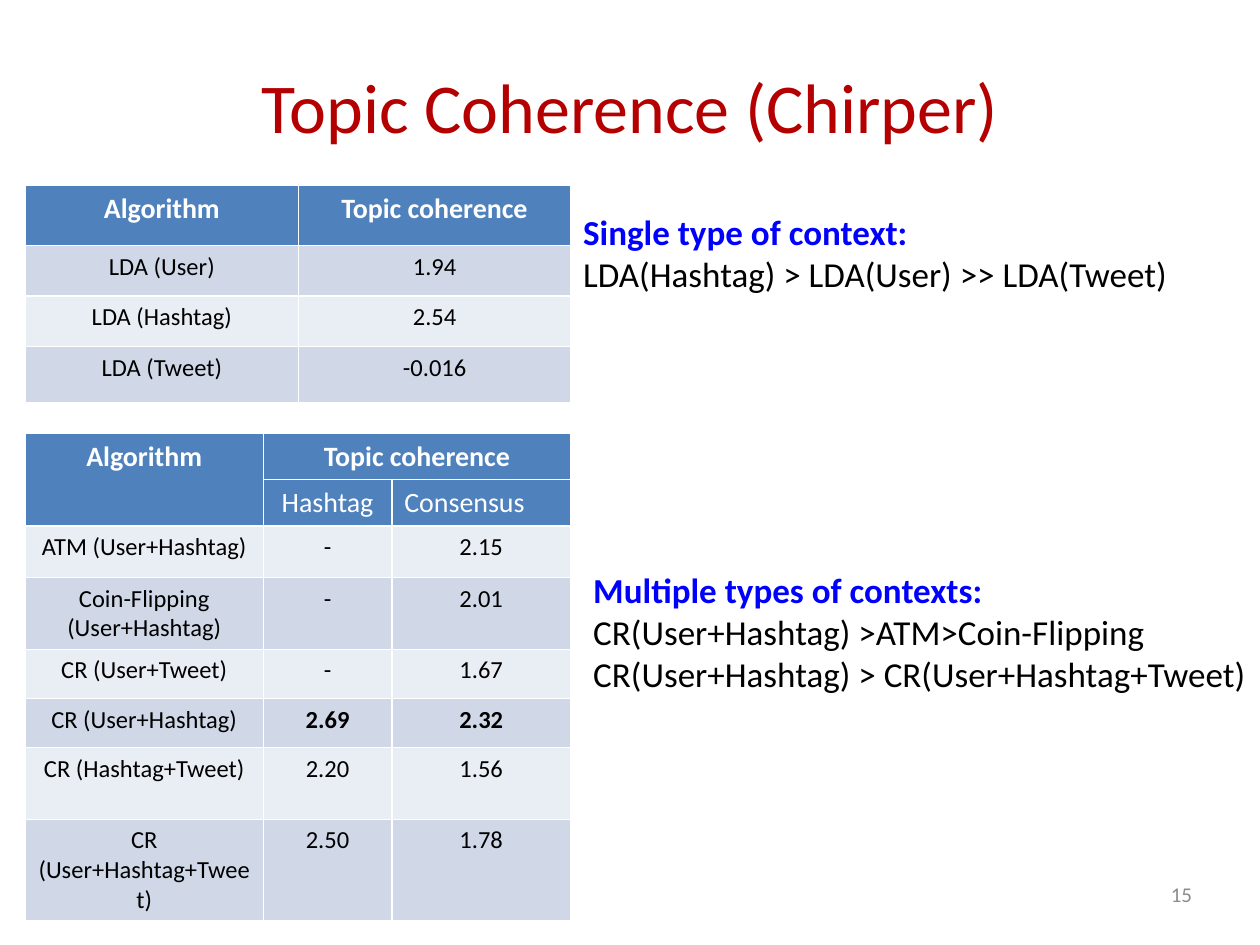
from dataclasses import dataclass

import pptx
import pptx.dml.color
import pptx.enum.text
import pptx.util

Inches = pptx.util.Inches
Align = pptx.enum.text.PP_ALIGN
Anchor = pptx.enum.text.MSO_ANCHOR

FONT = "Calibri"
HEADER_FILL = "4F81BD"
BAND_FILLS = ("E9EDF4", "D0D8E8")
WHITE, BLACK, BLUE, RED, GRAY = "FFFFFF", "000000", "0000FF", "B40000", "8C8C8C"


@dataclass(frozen=True)
class Line:
    text: str
    size: int
    color: str = BLACK
    bold: bool = False
    align: Align = Align.LEFT


@dataclass(frozen=True)
class TextBlock:
    left: float
    top: float
    width: float
    height: float
    lines: tuple[Line, ...]
    anchor: Anchor = Anchor.TOP


@dataclass(frozen=True)
class ScoreTable:
    top: float
    columns: tuple[float, ...]
    row_heights: tuple[float, ...]
    rows: tuple[tuple[str, ...], ...]
    header_rows: int = 1
    best_row: int | None = None
    left: float = 0.2


def rgb(color: str) -> pptx.dml.color.RGBColor:
    return pptx.dml.color.RGBColor.from_string(color)


def write_line(paragraph, line: Line) -> None:
    paragraph.alignment = line.align
    run = paragraph.add_run()
    run.text = line.text
    run.font.name = FONT
    run.font.size = pptx.util.Pt(line.size)
    run.font.bold = line.bold
    run.font.color.rgb = rgb(line.color)


def draw_text(slide, block: TextBlock) -> None:
    shape = slide.shapes.add_textbox(
        Inches(block.left), Inches(block.top), Inches(block.width), Inches(block.height)
    )
    frame = shape.text_frame
    frame.word_wrap = True
    frame.vertical_anchor = block.anchor
    for index, line in enumerate(block.lines):
        paragraph = frame.add_paragraph() if index else frame.paragraphs[0]
        write_line(paragraph, line)


def cell_line(scores: ScoreTable, row: int, column: int) -> Line:
    text = scores.rows[row][column]
    if row < scores.header_rows:
        align = Align.LEFT if text == "Consensus" else Align.CENTER
        return Line(text, 16, WHITE, row == 0, align)
    bold = row == scores.best_row and column > 0
    return Line(text, 14, BLACK, bold, Align.CENTER)


def draw_table(slide, scores: ScoreTable):
    table = slide.shapes.add_table(
        len(scores.rows),
        len(scores.columns),
        Inches(scores.left),
        Inches(scores.top),
        Inches(sum(scores.columns)),
        Inches(sum(scores.row_heights)),
    ).table
    for column, width in zip(table.columns, scores.columns):
        column.width = Inches(width)
    for row, height in zip(table.rows, scores.row_heights):
        row.height = Inches(height)
    for row, texts in enumerate(scores.rows):
        for column, text in enumerate(texts):
            cell = table.cell(row, column)
            cell.fill.solid()
            is_header = row < scores.header_rows
            cell.fill.fore_color.rgb = rgb(HEADER_FILL if is_header else BAND_FILLS[row % 2])
            if text:
                write_line(cell.text_frame.paragraphs[0], cell_line(scores, row, column))
    return table


SINGLE_CONTEXT = ScoreTable(
    top=1.47,
    columns=(2.17, 2.16),
    row_heights=(0.48, 0.4, 0.4, 0.45),
    rows=(
        ("Algorithm", "Topic coherence"),
        ("LDA (User)", "1.94"),
        ("LDA (Hashtag)", "2.54"),
        ("LDA (Tweet)", "-0.016"),
    ),
)

MULTIPLE_CONTEXTS = ScoreTable(
    top=3.44,
    columns=(1.89, 1.02, 1.42),
    row_heights=(0.34, 0.29, 0.41, 0.57, 0.39, 0.39, 0.57, 0.57),
    rows=(
        ("Algorithm", "Topic coherence", ""),
        ("", "Hashtag", "Consensus"),
        ("ATM (User+Hashtag)", "-", "2.15"),
        ("Coin-Flipping (User+Hashtag)", "-", "2.01"),
        ("CR (User+Tweet)", "-", "1.67"),
        ("CR (User+Hashtag)", "2.69", "2.32"),
        ("CR (Hashtag+Tweet)", "2.20", "1.56"),
        ("CR (User+Hashtag+Tweet)", "2.50", "1.78"),
    ),
    header_rows=2,
    best_row=5,
)

TEXT_BLOCKS = (
    TextBlock(
        0.5, 0.21, 9, 1.25,
        (Line("Topic Coherence (Chirper)", 40, RED, align=Align.CENTER),),
        Anchor.MIDDLE,
    ),
    TextBlock(
        4.53, 1.62, 5.12, 1.11,
        (
            Line("Single type of context:", 20, BLUE, True),
            Line("LDA(Hashtag) > LDA(User) >> LDA(Tweet)", 20),
        ),
    ),
    TextBlock(
        4.61, 4.46, 5.39, 1.11,
        (
            Line("Multiple types of contexts:", 20, BLUE, True),
            Line("CR(User+Hashtag) >ATM>Coin-Flipping", 20),
            Line("CR(User+Hashtag) > CR(User+Hashtag+Tweet)", 20),
        ),
    ),
    TextBlock(
        7.23, 6.9, 2.33, 0.4,
        (Line("15", 12, GRAY, align=Align.RIGHT),),
        Anchor.MIDDLE,
    ),
)


def main() -> None:
    presentation = pptx.Presentation()
    presentation.slide_width = Inches(10)
    presentation.slide_height = Inches(7.5)
    slide = presentation.slides.add_slide(presentation.slide_layouts[6])
    for block in TEXT_BLOCKS:
        draw_text(slide, block)
    draw_table(slide, SINGLE_CONTEXT)
    table = draw_table(slide, MULTIPLE_CONTEXTS)
    table.cell(0, 0).merge(table.cell(1, 0))
    table.cell(0, 1).merge(table.cell(0, 2))
    presentation.save("out.pptx")


if __name__ == "__main__":
    main()
